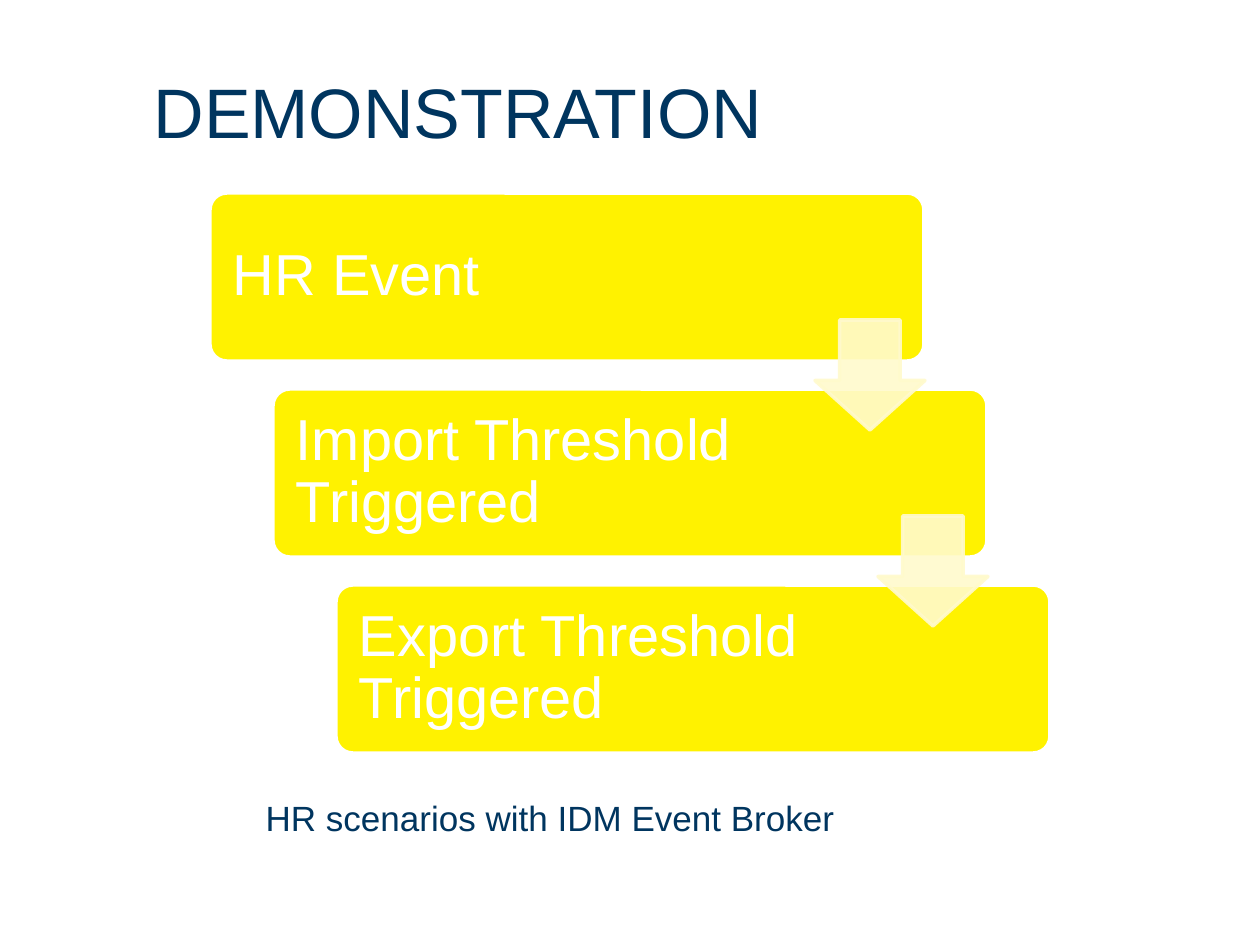
from dataclasses import dataclass

from lxml.etree import SubElement
from pptx import Presentation
from pptx.dml.color import RGBColor
from pptx.enum.shapes import MSO_SHAPE
from pptx.enum.text import MSO_ANCHOR, MSO_AUTO_SIZE, PP_ALIGN
from pptx.oxml.ns import qn
from pptx.util import Emu, Inches, Pt


@dataclass(frozen=True)
class Theme:
    font: str = "Arial"
    navy: str = "00355F"
    gold: str = "FFF200"
    cream: str = "FFFACC"
    white: str = "FFFFFF"
    title: int = 40
    step: int = 33
    note: int = 20
    edge: int = 2
    alpha: int = 90


@dataclass(frozen=True)
class Box:
    x: int
    y: int
    w: int
    h: int

    def emu(self) -> list[Emu]:
        return [px(n) for n in (self.x, self.y, self.w, self.h)]


THEME = Theme()
SCALE = Inches(1) / 126
STEPS = ["HR Event", "Import Threshold Triggered", "Export Threshold Triggered"]
FIRST = Box(210, 193, 714, 168)
SHIFT_X, SHIFT_Y = 63, 196
INSET, PAD = 5, 18


def px(n: int) -> Emu:
    return Emu(round(n * SCALE))


def rgb(code: str) -> RGBColor:
    return RGBColor.from_string(code)


def place(shape, box: Box) -> None:
    shape.left, shape.top, shape.width, shape.height = box.emu()


def write(shape, text: str, size: int, color: str):
    """Set left-aligned text and return its paragraph."""
    frame = shape.text_frame
    frame.text = text
    frame.word_wrap = True
    frame.auto_size = MSO_AUTO_SIZE.NONE
    para = frame.paragraphs[0]
    para.alignment = PP_ALIGN.LEFT
    para.space_before = Pt(0)
    font = para.runs[0].font
    font.name, font.size, font.color.rgb = THEME.font, Pt(size), rgb(color)
    return para


def draw(slide, kind: MSO_SHAPE, box: Box, ratios: list[float], fill: str, line: str):
    shape = slide.shapes.add_shape(kind, *box.emu())
    shape.shadow.inherit = False
    for i, ratio in enumerate(ratios):
        shape.adjustments[i] = ratio
    shape.fill.solid()
    shape.fill.fore_color.rgb = rgb(fill)
    shape.line.color.rgb = rgb(line)
    shape.line.width = Pt(THEME.edge)
    return shape


def add_step(slide, box: Box, text: str) -> None:
    draw(slide, MSO_SHAPE.ROUNDED_RECTANGLE, box, [0.1], THEME.gold, THEME.white)
    area = Box(box.x + INSET, box.y + INSET, 532, box.h - 2 * INSET)
    label = slide.shapes.add_textbox(*area.emu())
    para = write(label, text, THEME.step, THEME.white)
    para.line_spacing = 0.9
    frame = label.text_frame
    frame.vertical_anchor = MSO_ANCHOR.MIDDLE
    frame.margin_left = frame.margin_right = px(PAD)
    frame.margin_top = frame.margin_bottom = px(PAD)


def add_arrow(slide, box: Box) -> None:
    arrow = draw(slide, MSO_SHAPE.DOWN_ARROW, box, [0.55, 0.45],
                 THEME.cream, THEME.cream)
    # Make both the fill and the outline slightly transparent
    for color in arrow._element.spPr.iter(qn("a:srgbClr")):
        SubElement(color, qn("a:alpha"), val=str(THEME.alpha * 1000))


def main() -> None:
    deck = Presentation()
    deck.slide_width, deck.slide_height = Inches(10), Inches(7.5)
    slide = deck.slides.add_slide(deck.slide_layouts[1])

    # Title
    title = slide.shapes.title
    place(title, Box(141, 77, 1057, 82))
    para = write(title, "DEMONSTRATION", THEME.title, THEME.navy)
    para.line_spacing = Pt(39)
    title.text_frame.vertical_anchor = MSO_ANCHOR.MIDDLE

    # Note below the steps
    body = slide.placeholders[1]
    place(body, Box(253, 790, 983, 89))
    para = write(body, "HR scenarios with IDM Event Broker", THEME.note, THEME.navy)
    para.space_after = Pt(6)
    props = para._p.get_or_add_pPr()
    props.set("marL", "0")
    props.set("indent", "0")
    SubElement(props, qn("a:buNone"))

    # Staircase of steps
    boxes = [Box(FIRST.x + i * SHIFT_X, FIRST.y + i * SHIFT_Y, FIRST.w, FIRST.h)
             for i in range(len(STEPS))]
    for box, text in zip(boxes, STEPS):
        add_step(slide, box, text)

    # Arrows from each step to the next
    for box in boxes[:-1]:
        add_arrow(slide, Box(box.x + 605, box.y + 127, 110, 110))

    deck.save("out.pptx")


if __name__ == "__main__":
    main()
